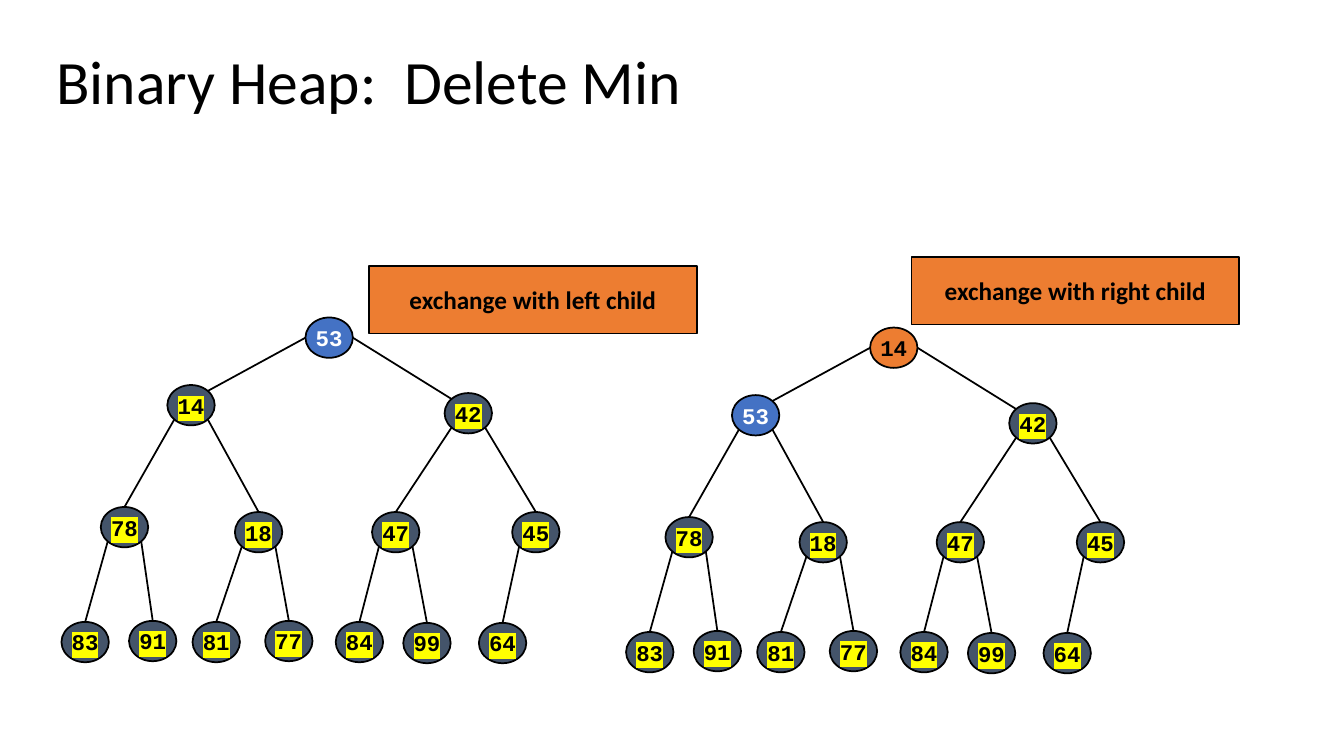
"""Build the slide showing two steps of a binary heap's delete-min."""
import dataclasses
import math

import pptx
import pptx.dml.color
import pptx.enum.shapes
import pptx.enum.text
import pptx.oxml
import pptx.oxml.ns
import pptx.util
from pptx.util import Inches


@dataclasses.dataclass(frozen=True)
class Theme:
    black: str = "000000"
    white: str = "FFFFFF"
    blue: str = "4472C4"
    orange: str = "ED7D31"
    slate: str = "44546A"
    yellow: str = "FFFF00"
    text_font: str = "Calibri"
    key_font: str = "Courier New"
    title_size: int = 44
    callout_size: int = 18
    key_size: int = 16
    line_width: float = 1.25


theme = Theme()


def write(box, text, font, size, color, bold=True, highlight=None):
    """Put one formatted run in the box and return its paragraph."""
    box.text_frame.vertical_anchor = pptx.enum.text.MSO_ANCHOR.MIDDLE
    para = box.text_frame.paragraphs[0]
    span = para.add_run()
    span.text = text
    span.font.size = pptx.util.Pt(size)
    span.font.bold = bold
    span.font.color.rgb = pptx.dml.color.RGBColor.from_string(color)
    if highlight:
        mark = pptx.oxml.parse_xml(
            f'<a:highlight {pptx.oxml.ns.nsdecls("a")}>'
            f'<a:srgbClr val="{highlight}"/></a:highlight>')
        span.font._element.append(mark)
    span.font.name = font
    return para


def add_label(page, kind, left, top, width, height, fill):
    """Add an outlined, filled shape whose text does not wrap."""
    shape = page.shapes.add_shape(
        kind, Inches(left), Inches(top), Inches(width), Inches(height))
    shape.shadow.inherit = False
    shape.fill.solid()
    shape.fill.fore_color.rgb = pptx.dml.color.RGBColor.from_string(fill)
    shape.line.color.rgb = pptx.dml.color.RGBColor.from_string(theme.black)
    shape.line.width = pptx.util.Pt(theme.line_width)
    shape.text_frame.word_wrap = False
    return shape


deck = pptx.Presentation()
deck.slide_width = Inches(13.33)
deck.slide_height = Inches(7.5)
page = deck.slides.add_slide(deck.slide_layouts[6])

title = page.shapes.add_textbox(
    Inches(0.46), Inches(0.24), Inches(10.8), Inches(1.19))
title.text_frame.word_wrap = True
para = write(title, "Binary Heap:  Delete Min", theme.text_font,
             theme.title_size, theme.black, bold=False)
para.line_spacing = 0.9

node_width, node_height = 0.47, 0.4
corner_x = node_width / 2 * math.sqrt(0.5)
corner_y = node_height / 2 * math.sqrt(0.5)

# Slots are in heap order: the children of slot i are 2i + 1 and 2i + 2.
slots = [
    (3.03, 3.15),
    (1.66, 3.82), (4.41, 3.9),
    (1, 5.03), (2.33, 5.08), (3.69, 5.08), (5.08, 5.08),
    (0.61, 6.17), (1.28, 6.16), (1.91, 6.17), (2.63, 6.16),
    (3.33, 6.17), (4, 6.18), (4.75, 6.18),
]
lower_keys = ["42", "78", "18", "47", "45",
              "83", "91", "81", "77", "84", "99", "64"]
plain_styles = {
    "moving": (theme.blue, theme.white, None),
    "raised": (theme.orange, theme.black, None),
    "resting": (theme.slate, theme.black, theme.yellow),
}
steps = [
    (0, 0, ["53", "14"], ["moving", "resting"],
     "exchange with left child", 3.66, 2.64),
    (5.6, 0.1, ["14", "53"], ["raised", "moving"],
     "exchange with right child", 9.04, 2.55),
]

for shift_x, shift_y, top_keys, top_states, message, left, top in steps:
    keys = top_keys + lower_keys
    states = top_states + ["resting"] * len(lower_keys)
    nodes = []
    for (x, y), key, state in zip(slots, keys, states):
        fill, ink, highlight = plain_styles[state]
        node = add_label(page, pptx.enum.shapes.MSO_SHAPE.OVAL, x + shift_x,
                         y + shift_y, node_width, node_height, fill)
        para = write(node, key, theme.key_font, theme.key_size, ink,
                     highlight=highlight)
        para.alignment = pptx.enum.text.PP_ALIGN.CENTER
        nodes.append(node)

    for child in range(1, len(nodes)):
        parent = (child - 1) // 2
        side = -1 if child % 2 else 1
        start_x, start_y, end_x, end_y = (
            slots[parent][0] + shift_x + node_width / 2,
            slots[parent][1] + shift_y + node_height / 2,
            slots[child][0] + shift_x + node_width / 2,
            slots[child][1] + shift_y)
        if parent == 0:
            start_x += side * node_width / 2
            end_x -= side * corner_x
            end_y += node_height / 2 - corner_y
        else:
            start_x += side * corner_x
            start_y += corner_y
        edge = page.shapes.add_connector(
            pptx.enum.shapes.MSO_CONNECTOR.STRAIGHT, Inches(start_x),
            Inches(start_y), Inches(end_x), Inches(end_y))
        if parent > 0:
            edge.end_connect(nodes[child], 0)
        edge.line.color.rgb = pptx.dml.color.RGBColor.from_string(theme.black)
        edge.line.width = pptx.util.Pt(theme.line_width)
        edge._element.spPr.append(pptx.oxml.parse_xml(
            f'<a:effectLst {pptx.oxml.ns.nsdecls("a")}/>'))

    callout = add_label(page, pptx.enum.shapes.MSO_SHAPE.RECTANGLE,
                        left, top, 3.25, 0.67, theme.orange)
    para = write(callout, message, theme.text_font, theme.callout_size,
                 theme.black)
    para.alignment = pptx.enum.text.PP_ALIGN.CENTER

deck.save("out.pptx")
